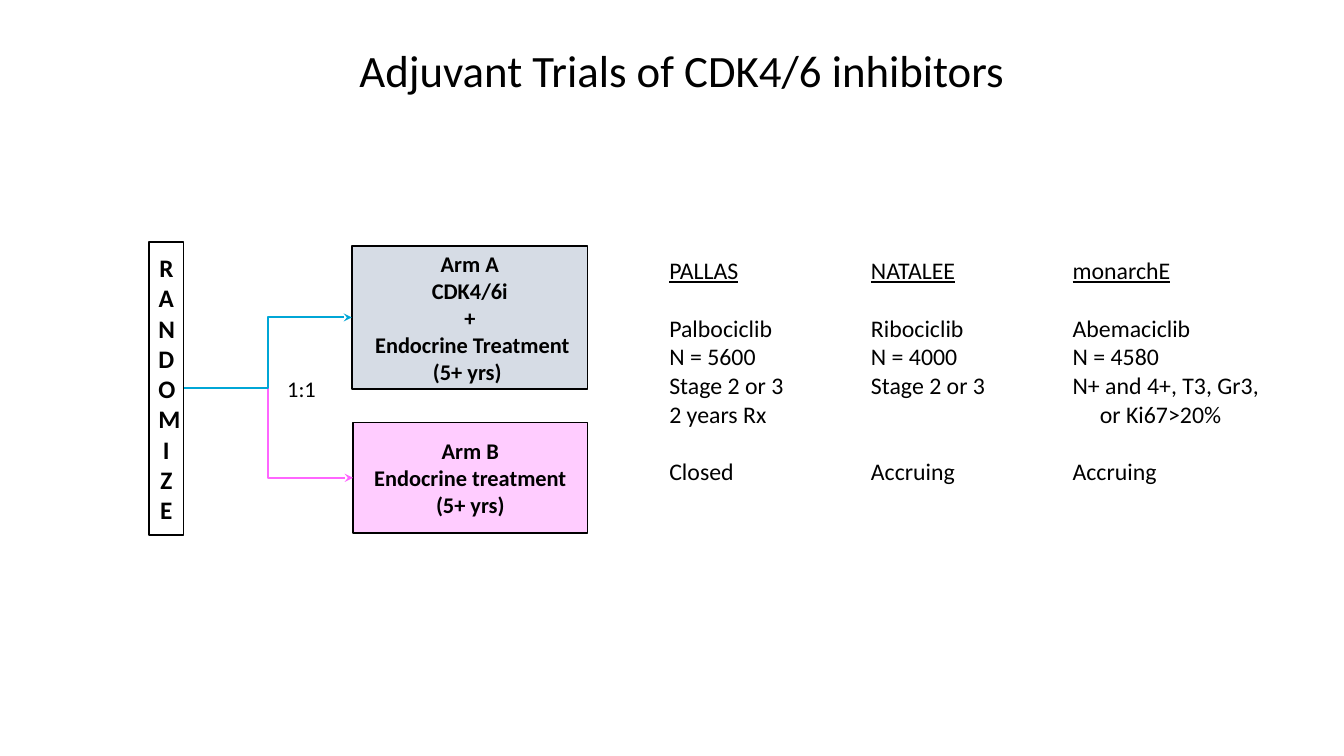
from lxml import etree
from pptx import Presentation, util as u
from pptx.dml.color import RGBColor
from pptx.enum import shapes, text
from pptx.oxml.ns import qn

BLACK = RGBColor(0x00, 0x00, 0x00)
SLATE = RGBColor(0xD6, 0xDC, 0xE5)
PINK = RGBColor(0xFF, 0xCC, 0xFF)
MAGENTA = RGBColor(0xFF, 0x66, 0xFF)
BLUE = RGBColor(0x00, 0xA6, 0xD6)
LEFT, CENTER = text.PP_ALIGN.LEFT, text.PP_ALIGN.CENTER
TOP, MIDDLE = text.MSO_ANCHOR.TOP, text.MSO_ANCHOR.MIDDLE

ARM_A = ["Arm A", "CDK4/6i", "+", " Endocrine Treatment", "(5+ yrs) "]
ARM_B = ["Arm B", "Endocrine treatment", "(5+ yrs)"]
TRIAL_NAMES = ["PALLAS", "NATALEE", "monarchE"]
TRIAL_ROWS = [
    "Palbociclib\tRibociclib\tAbemaciclib",
    "N = 5600\tN = 4000\tN = 4580",
    "Stage 2 or 3\tStage 2 or 3\tN+ and 4+, T3, Gr3,",
    "2 years Rx\t\t\tor Ki67>20%",
    "Closed\tAccruing\tAccruing",
]
SECTION_STARTS = ("Palbociclib", "Closed")
TRIAL_TABS = (2, 4, 4.27)


def style(p, size, bold=False, align=LEFT):
    """Set the font and alignment of one paragraph."""
    p.alignment = align
    p.font.name, p.font.size, p.font.bold = "Calibri", u.Pt(size), bold
    p.font.color.rgb = BLACK


def add_label(s, box, words, size, align=LEFT, anchor=TOP):
    """Add a one-paragraph text box."""
    tf = s.shapes.add_textbox(*map(u.Inches, box)).text_frame
    tf.word_wrap, tf.vertical_anchor = True, anchor
    p = tf.paragraphs[0]
    p.text = words
    style(p, size, align=align)


def add_box(s, box, lines, size, fill=None):
    """Add an outlined rectangle with bold centred lines."""
    sp = s.shapes.add_shape(shapes.MSO_SHAPE.RECTANGLE, *map(u.Inches, box))
    sp.shadow.inherit = False
    if fill is None:
        sp.fill.background()
    else:
        sp.fill.solid()
        sp.fill.fore_color.rgb = fill
    sp.line.color.rgb, sp.line.width = BLACK, u.Pt(1)
    tf = sp.text_frame
    tf.word_wrap, tf.vertical_anchor = True, MIDDLE
    tf.margin_left = tf.margin_right = u.Inches(0.09)
    tf.margin_top = tf.margin_bottom = u.Inches(0.04)
    tf.text = "\n".join(lines)
    for p in tf.paragraphs:
        style(p, size, True, CENTER)


def add_arrow(s, start, end, color):
    """Add an elbow connector with a stealth arrowhead."""
    cx = s.shapes.add_connector(shapes.MSO_CONNECTOR.ELBOW, *map(u.Inches, start + end))
    cx.line.color.rgb, cx.line.width = color, u.Pt(1.5)
    etree.SubElement(cx.line._get_or_add_ln(), qn("a:tailEnd"), type="stealth")
    etree.SubElement(cx._element.spPr, qn("a:effectLst"))


def add_schema(s, x, y):
    """Draw the randomization scheme with its two arms."""
    arm_a = (x + 2.01, y + 0.04, 2.34, 1.42)
    arm_b = (x + 2.02, y + 1.79, 2.33, 1.1)
    add_box(s, arm_a, ARM_A, 16, SLATE)
    add_box(s, arm_b, ARM_B, 16, PINK)
    for (left, top, _, height), color in ((arm_b, MAGENTA), (arm_a, BLUE)):
        add_arrow(s, (x + 0.34, y + 1.45), (left, top + height / 2), color)
    add_box(s, (x, y, 0.34, 2.91), ["RANDOMIZE"], 18)
    add_label(s, (x + 1.27, y + 1.27, 0.75, 0.37), "1:1", 16)


def add_trials(s, box):
    """List the three trials in tabbed columns."""
    tf = s.shapes.add_textbox(*map(u.Inches, box)).text_frame
    tf.word_wrap = True
    tf.text = "\n".join(["", *TRIAL_ROWS])
    for p in tf.paragraphs:
        tabs = etree.SubElement(p._p.get_or_add_pPr(), qn("a:tabLst"))
        for pos in TRIAL_TABS:
            etree.SubElement(tabs, qn("a:tab"), pos=str(u.Inches(pos)), algn="l")
        style(p, 17)
        if p.text.startswith(SECTION_STARTS):
            p.space_before = u.Pt(20.75)
    head = tf.paragraphs[0]
    for i, name in enumerate(TRIAL_NAMES):
        if i:
            head.add_run().text = "\t"
        r = head.add_run()
        r.text, r.font.underline = name, True


def main():
    """Build and save the slide."""
    prs = Presentation()
    prs.slide_width, prs.slide_height = u.Inches(13.33), u.Inches(7.5)
    s = prs.slides.add_slide(prs.slide_layouts[6])
    add_label(s, (2.2, 0.21, 9.13, 0.96), "Adjuvant Trials of CDK4/6 inhibitors",
              32, CENTER, MIDDLE)
    add_schema(s, 1.48, 2.4)
    add_trials(s, (6.54, 2.49, 6.26, 2.39))
    prs.save("out.pptx")


if __name__ == "__main__":
    main()
